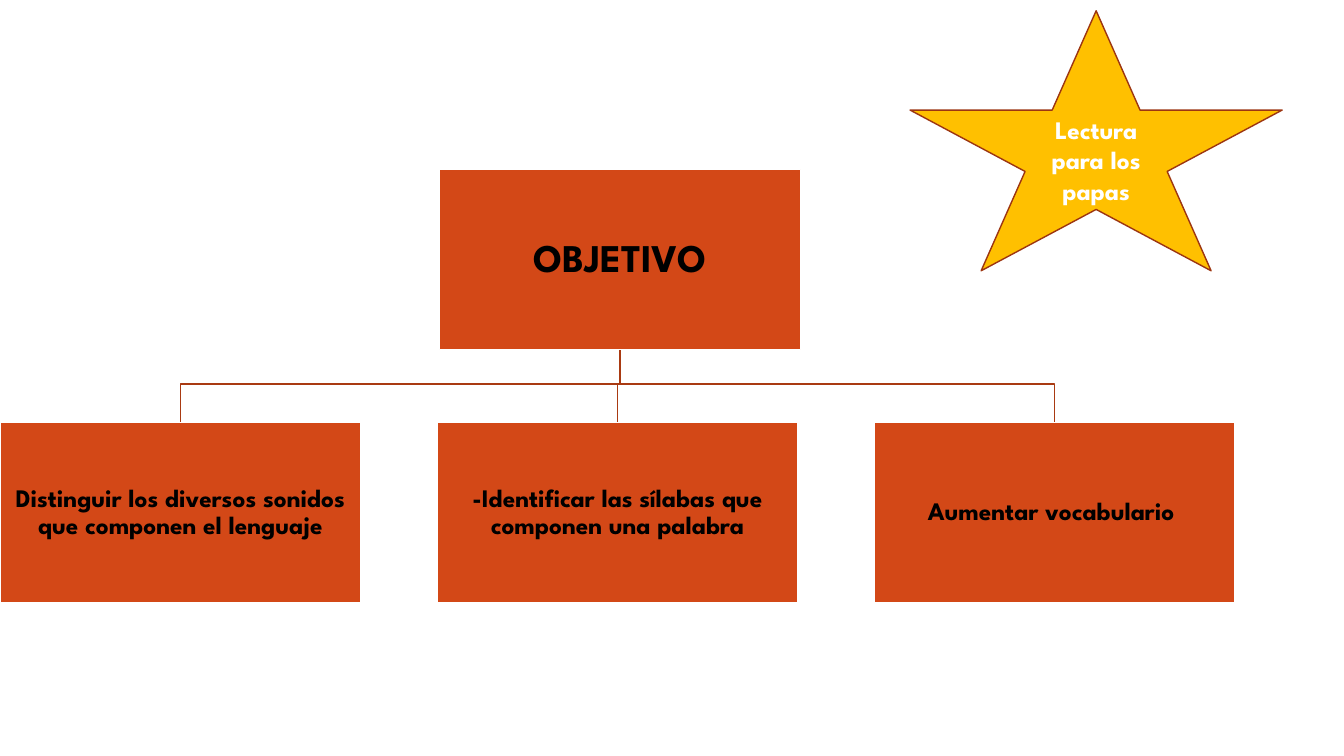
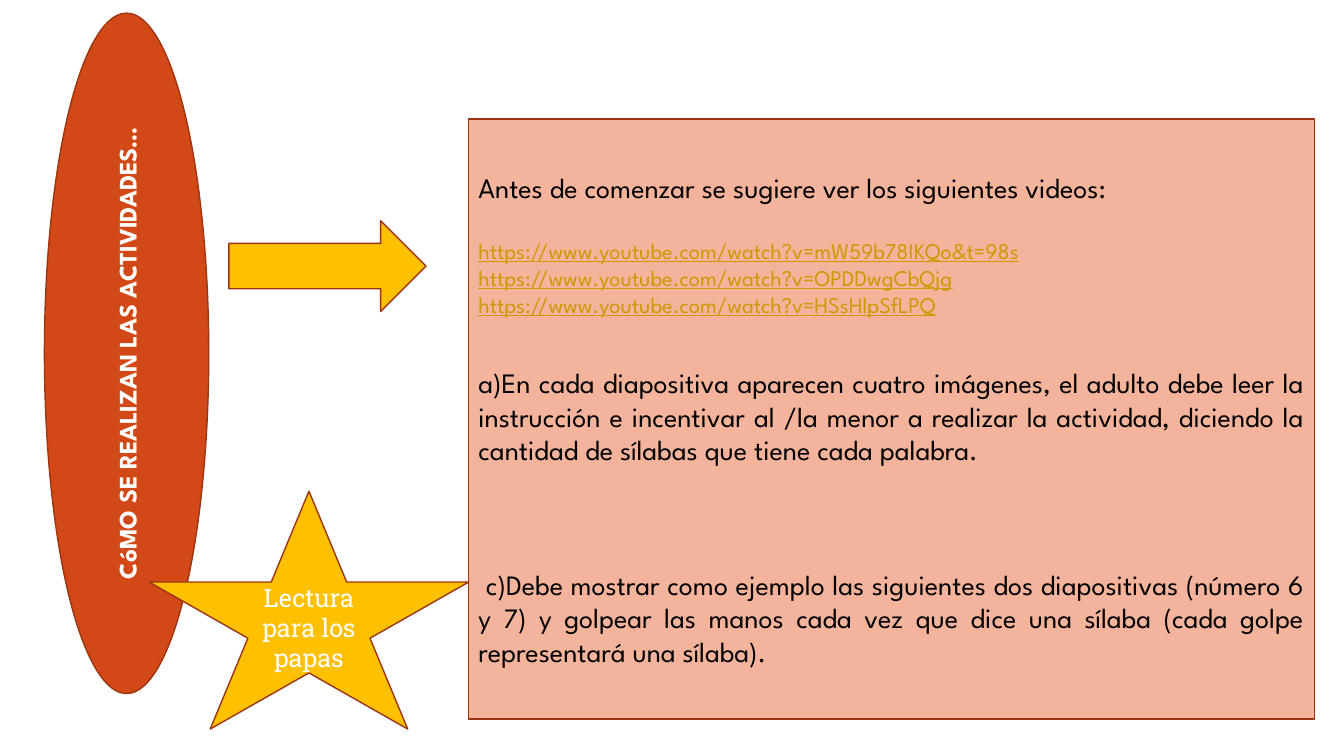
from dataclasses import dataclass
from pptx import Presentation
from pptx.dml.color import RGBColor as Rgb
from pptx.enum.shapes import MSO_SHAPE as Kind
from pptx.enum.text import MSO_ANCHOR as Anchor, MSO_AUTO_SIZE as Fit, PP_ALIGN as Align
from pptx.util import Inches, Pt

WIDE, HIGH = Inches(13.33), Inches(7.5)
SANS, SLAB = "League Spartan", "Roboto Slab"
COLORS = {
    "rust": "D34817", "edge": "9C3511", "wire": "A93A12", "gold": "FFC000",
    "blush": "F4B39B", "link": "CC9900", "white": "FFFFFF", "black": "000000",
}


@dataclass(frozen=True)
class Box:
    """A place on the slide, in percent of its width and height."""
    left: float
    top: float
    width: float
    height: float

    @property
    def mid(self) -> float:
        return self.left + self.width / 2

    @property
    def foot(self) -> float:
        return self.top + self.height

    def emu(self) -> tuple:
        return (across(self.left), down(self.top),
                across(self.width), down(self.height))


@dataclass(frozen=True)
class Para:
    text: str
    size: float = 18
    color: str = "white"
    bold: bool = False
    font: str = SANS
    align: Align = Align.CENTER
    before: float = 0
    line: float = 1.0
    under: bool = False


def across(share: float) -> int:
    return round(WIDE * share / 100)


def down(share: float) -> int:
    return round(HIGH * share / 100)


def tint(name: str) -> Rgb:
    return Rgb.from_string(COLORS[name])


# Shared drawing
def write(shape, paras: list, inset: float = 0.1) -> None:
    frame = shape.text_frame
    frame.word_wrap, frame.auto_size = True, Fit.NONE
    frame.vertical_anchor = Anchor.MIDDLE
    frame.margin_left = frame.margin_right = Inches(inset)
    frame.margin_top = frame.margin_bottom = Inches(inset / 2)
    for num, item in enumerate(paras):
        para = frame.add_paragraph() if num else frame.paragraphs[0]
        para.text = item.text
        para.alignment, para.line_spacing = item.align, item.line
        para.space_before, para.space_after = Pt(item.before), Pt(0)
        font = para.font
        font.name, font.size, font.bold = item.font, Pt(item.size), item.bold
        font.underline = item.under
        font.color.rgb = tint(item.color)


def trace(shape, line: str) -> None:
    shape.line.color.rgb = tint(line)
    shape.line.width = Pt(1)


def paint(shape, fill: str, line: str) -> None:
    shape.fill.solid()
    shape.fill.fore_color.rgb = tint(fill)
    trace(shape, line)


def draw(slide, kind: Kind, box: Box, fill: str, line: str = "edge"):
    shape = slide.shapes.add_shape(kind, *box.emu())
    shape.shadow.inherit = False
    paint(shape, fill, line)
    return shape


def head(slide, box: Box, para: Para, turn: float = 0):
    """Place the title above what is drawn so far."""
    title = slide.shapes.title
    title.left, title.top, title.width, title.height = box.emu()
    title.rotation = turn
    write(title, [para], 0.02)
    slide.shapes.element.append(title.element)
    return title


def star(slide, box: Box, font: str, bold: bool) -> None:
    shape = draw(slide, Kind.STAR_5_POINT, box, "gold")
    write(shape, [Para("Lectura para los papas", font=font, bold=bold)])


# Goal chart
GOALS = [
    "Distinguir los diversos sonidos que componen el lenguaje",
    "-Identificar las sílabas que componen una palabra",
    "Aumentar vocabulario ",
]
CARD = (26.85, 23.87)
STEP, ROW, BUS = 32.52, 55.87, 50.8


def branch(slide, root: Box, card: Box) -> None:
    """Draw an open, bent line from the root down to a card."""
    spots = [(root.mid, BUS), (card.mid, BUS), (card.mid, card.top)]
    pen = slide.shapes.build_freeform(across(root.mid), down(root.foot))
    pen.add_line_segments([(across(x), down(y)) for x, y in spots], close=False)
    shape = pen.convert_to_shape()
    shape.shadow.inherit = False
    shape.fill.background()
    trace(shape, "wire")


def goals(slide) -> None:
    star(slide, Box(67.72, 1.42, 27.68, 34.4), SANS, True)
    root = Box(32.7, 22.4, *CARD)
    cards = [Box(num * STEP, ROW, *CARD) for num in range(len(GOALS))]
    # Branches
    for card in reversed(cards):
        branch(slide, root, card)
    # Boxes
    title = head(slide, root, Para("OBJETIVO", 28, "black", True, line=0.9))
    paint(title, "rust", "white")
    for card, goal in zip(cards, GOALS):
        shape = draw(slide, Kind.RECTANGLE, card, "rust", "white")
        write(shape, [Para(goal, 18, "black", True, line=0.9)], 0.01)


# Steps for parents
LINKS = [
    "https://www.youtube.com/watch?v=mW59b78IKQo&t=98s",
    "https://www.youtube.com/watch?v=OPDDwgCbQjg",
    "https://www.youtube.com/watch?v=HSsHlpSfLPQ",
]
STEPS = [
    ("a)En cada diapositiva aparecen cuatro imágenes, el adulto debe leer la "
     "instrucción e incentivar al /la menor a realizar la actividad, diciendo "
     "la cantidad de sílabas que tiene cada palabra.", 34),
    (" c)Debe mostrar como ejemplo las siguientes dos diapositivas (número 6 "
     "y 7) y golpear las manos cada vez que dice una sílaba (cada golpe "
     "representará una sílaba).", 72),
]


def steps(slide) -> None:
    # Upright title
    oval = Box(-15.9, 35.87, 50.64, 21.73)
    draw(slide, Kind.OVAL, oval, "rust").rotation = 270
    head(slide, oval, Para("CóMO SE REALIZAN LAS ACTIVIDADES…", bold=True), 270)
    draw(slide, Kind.RIGHT_ARROW, Box(17.03, 29.2, 14.67, 12), "gold")
    # Panel
    panel = draw(slide, Kind.RECTANGLE, Box(34.86, 15.77, 62.94, 79.33), "blush")
    paras = [Para("Antes de comenzar se sugiere ver los siguientes videos:",
                  20, "black", align=Align.LEFT)]
    paras += [Para(link, 16, "link", align=Align.LEFT, under=True,
                   before=0 if num else 24) for num, link in enumerate(LINKS)]
    paras += [Para(text, 20, "black", align=Align.JUSTIFY, before=gap)
              for text, gap in STEPS]
    write(panel, paras)
    star(slide, Box(11.1, 64.97, 23.78, 31.47), SLAB, False)


def main() -> None:
    deck = Presentation()
    deck.slide_width, deck.slide_height = WIDE, HIGH
    for build in (goals, steps):
        build(deck.slides.add_slide(deck.slide_layouts.get_by_name("Title Only")))
    deck.save("out.pptx")


if __name__ == "__main__":
    main()
